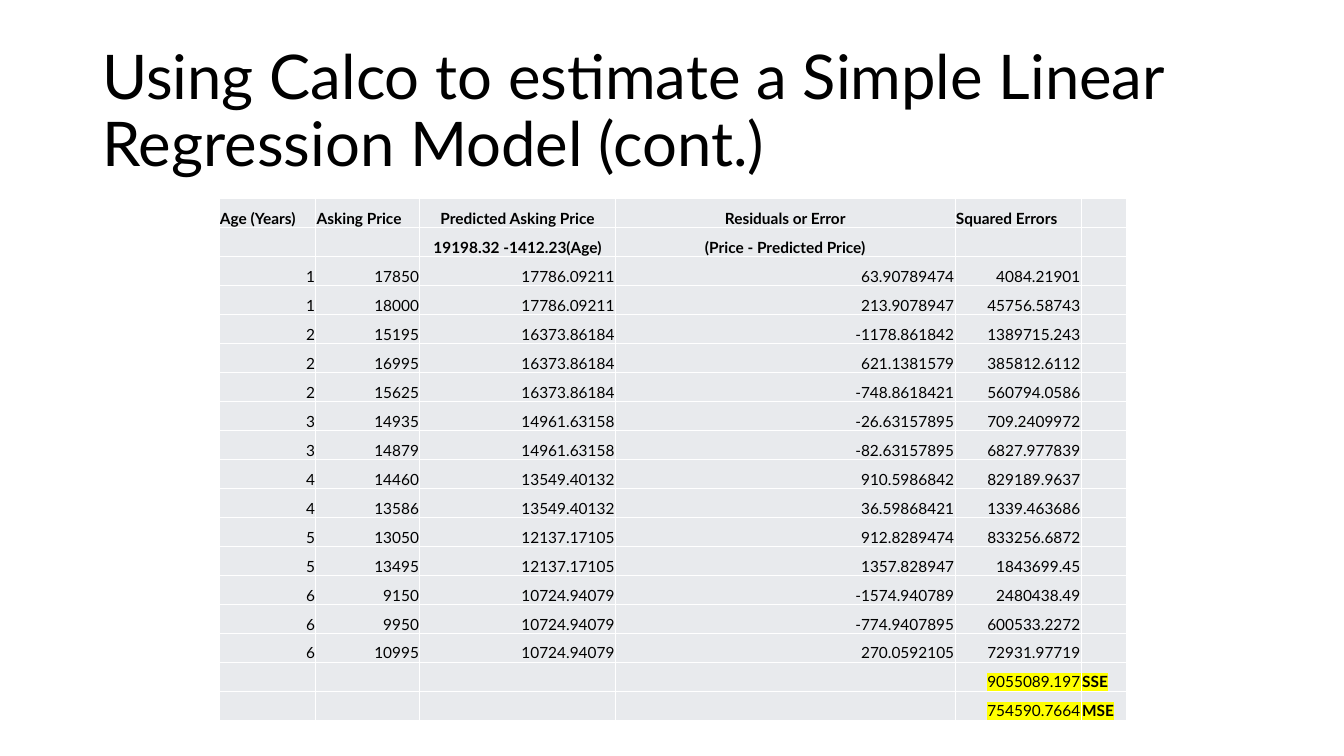
from lxml import etree
from pptx import Presentation
from pptx.dml.color import RGBColor
from pptx.enum.text import MSO_ANCHOR, PP_ALIGN
from pptx.oxml.ns import qn
from pptx.util import Cm, Pt

LEFT, CENTER, RIGHT = PP_ALIGN.LEFT, PP_ALIGN.CENTER, PP_ALIGN.RIGHT
MIDDLE, BOTTOM = MSO_ANCHOR.MIDDLE, MSO_ANCHOR.BOTTOM

TITLE = "Using Calco to estimate a Simple Linear Regression Model (cont.)"
COLUMN_WIDTHS = [2.44, 2.62, 4.93, 8.56, 3.18, 1.14]
HEADER_ALIGNMENTS = [LEFT, LEFT, CENTER, CENTER, LEFT, LEFT]
HEADERS = [
    ["Age (Years)", "Asking Price", "Predicted Asking Price",
     "Residuals or Error", "Squared Errors", ""],
    ["", "", "19198.32 -1412.23(Age)", "(Price - Predicted Price)", "", ""],
]
PREDICTED_PRICES = {
    1: "17786.09211", 2: "16373.86184", 3: "14961.63158",
    4: "13549.40132", 5: "12137.17105", 6: "10724.94079",
}
# Age, asking price, residual, squared error
CARS = [
    (1, "17850", "63.90789474", "4084.21901"),
    (1, "18000", "213.9078947", "45756.58743"),
    (2, "15195", "-1178.861842", "1389715.243"),
    (2, "16995", "621.1381579", "385812.6112"),
    (2, "15625", "-748.8618421", "560794.0586"),
    (3, "14935", "-26.63157895", "709.2409972"),
    (3, "14879", "-82.63157895", "6827.977839"),
    (4, "14460", "910.5986842", "829189.9637"),
    (4, "13586", "36.59868421", "1339.463686"),
    (5, "13050", "912.8289474", "833256.6872"),
    (5, "13495", "1357.828947", "1843699.45"),
    (6, "9150", "-1574.940789", "2480438.49"),
    (6, "9950", "-774.9407895", "600533.2272"),
    (6, "10995", "270.0592105", "72931.97719"),
]
TOTALS = [("9055089.197", "SSE"), ("754590.7664", "MSE")]


def color(value):
    return RGBColor.from_string(value)


def add_solid_fill(parent, value):
    fill = etree.SubElement(parent, qn("a:solidFill"))
    etree.SubElement(fill, qn("a:srgbClr"), val=value)


def write_text(paragraph, text, *, size, font, ink, bold=False,
               align=LEFT, spacing=None, highlight=None):
    paragraph.alignment = align
    if spacing:
        paragraph.line_spacing = spacing
    if not text:
        # An empty cell still needs a small font to keep its row height
        etree.SubElement(paragraph._p, qn("a:endParaRPr"), sz=str(size * 100))
        return
    run = paragraph.add_run()
    run.text = text
    run.font.size = Pt(size)
    run.font.bold = bold
    run.font.color.rgb = color(ink)
    run.font.name = font
    if highlight:
        mark = etree.Element(qn("a:highlight"))
        etree.SubElement(mark, qn("a:srgbClr"), val=highlight)
        run.font._element.find(qn("a:solidFill")).addnext(mark)


class SlideBuilder:
    font = "Lato"
    ink = "000000"
    cell_fill = "E8EAED"
    border = "FFFFFF"
    highlight = "FFFF00"
    title_size = 44
    cell_size = 11

    def __init__(self, presentation):
        self.slide = presentation.slides.add_slide(presentation.slide_layouts[6])

    def title(self, text, left, top, width, height):
        shape = self.slide.shapes.add_textbox(Cm(left), Cm(top), Cm(width), Cm(height))
        frame = shape.text_frame
        frame.word_wrap = True
        frame.vertical_anchor = MIDDLE
        write_text(frame.paragraphs[0], text, size=self.title_size,
                   font=self.font, ink=self.ink, spacing=0.9)

    def table(self, rows, left, top, height):
        """Each row is a list of (text, format) pairs."""
        shape = self.slide.shapes.add_table(
            len(rows), len(COLUMN_WIDTHS), Cm(left), Cm(top),
            Cm(sum(COLUMN_WIDTHS)), Cm(height))
        table = shape.table
        for column, width in zip(table.columns, COLUMN_WIDTHS):
            column.width = Cm(width)
        for row_index, row in enumerate(rows):
            table.rows[row_index].height = Cm(height / len(rows))
            for column_index, (text, style) in enumerate(row):
                self.cell(table.cell(row_index, column_index), text, style)

    def cell(self, cell, text, style):
        cell.margin_left = cell.margin_right = cell.margin_top = Cm(0.02)
        cell.margin_bottom = 0
        cell.vertical_anchor = BOTTOM
        properties = cell._tc.get_or_add_tcPr()
        for side in ("lnL", "lnR", "lnT", "lnB"):
            line = etree.SubElement(properties, qn(f"a:{side}"), w=str(Pt(1)))
            add_solid_fill(line, self.border)
        cell.fill.solid()
        cell.fill.fore_color.rgb = color(self.cell_fill)
        write_text(cell.text_frame.paragraphs[0], text, size=self.cell_size,
                   font=self.font, ink=self.ink, **style)


def regression_rows():
    number = {"align": RIGHT}
    rows = [[(text, {"bold": True, "align": align})
             for text, align in zip(header, HEADER_ALIGNMENTS)]
            for header in HEADERS]
    for age, price, residual, squared in CARS:
        values = [str(age), price, PREDICTED_PRICES[age], residual, squared, ""]
        rows.append([(value, number) for value in values])
    marked = {"highlight": SlideBuilder.highlight}
    for total, label in TOTALS:
        rows.append([("", number)] * 4
                    + [(total, {**number, **marked}), (label, {"bold": True, **marked})])
    return rows


def main():
    presentation = Presentation()
    presentation.slide_width = Cm(33.87)
    presentation.slide_height = Cm(19.05)
    builder = SlideBuilder(presentation)

    # Title
    builder.title(TITLE, 2.33, 1.01, 29.21, 3.68)

    # Regression table
    builder.table(regression_rows(), 5.52, 5.01, 13.14)

    presentation.save("out.pptx")


if __name__ == "__main__":
    main()
